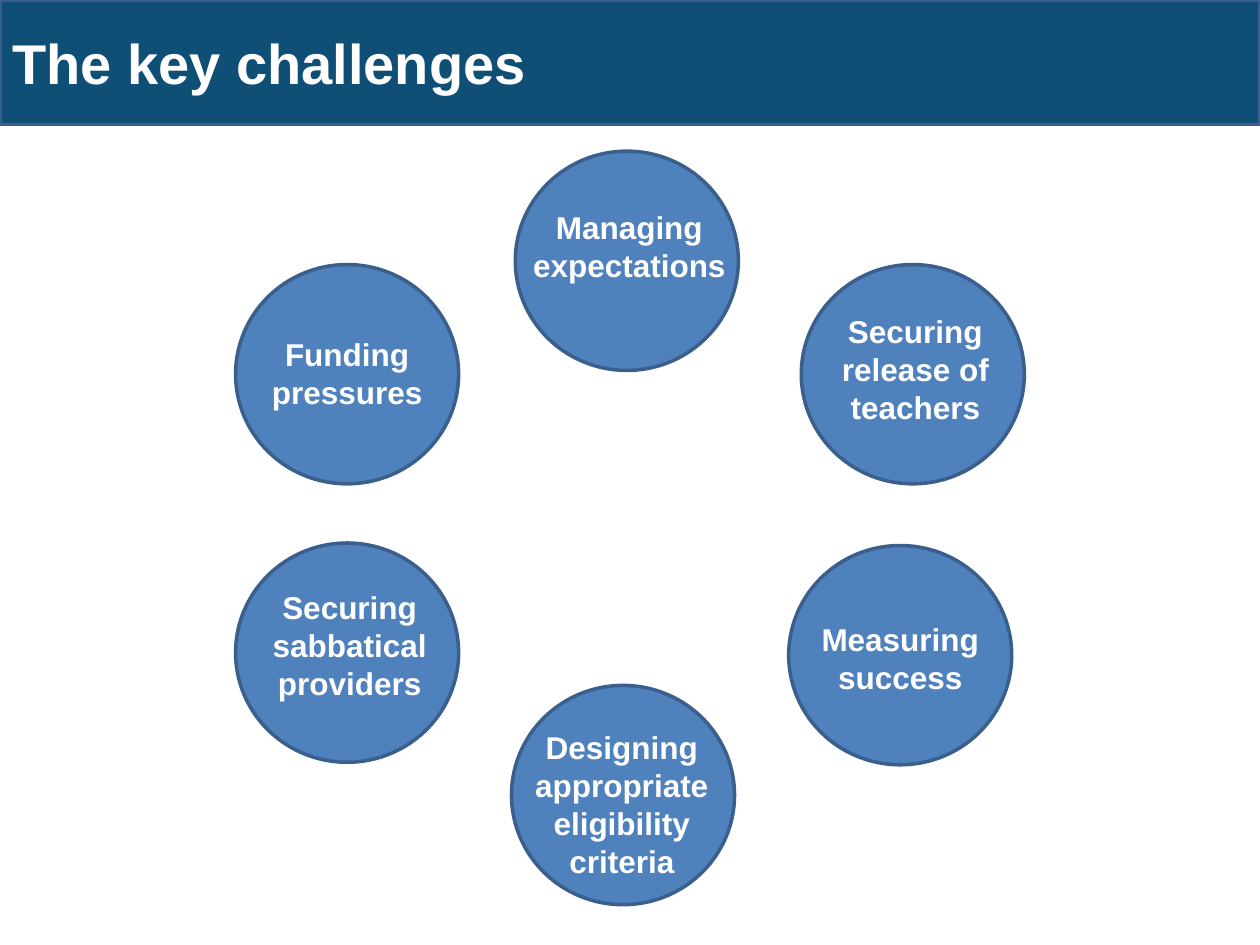
from pptx import Presentation
from pptx.dml.color import RGBColor
from pptx.enum.shapes import MSO_SHAPE
from pptx.enum.text import MSO_ANCHOR, MSO_AUTO_SIZE, PP_ALIGN
from pptx.util import Inches, Pt

NAVY = RGBColor(0x10, 0x4F, 0x75)
BLUE = RGBColor(0x4F, 0x81, 0xBD)
EDGE = RGBColor(0x3A, 0x5F, 0x8C)
WHITE = RGBColor(0xFF, 0xFF, 0xFF)

# Grid of 100 columns by 75 rows
WIDE, HIGH = Inches(10), Inches(7.5)
COL, ROW = WIDE / 100, HIGH / 75
DISC = (17.7, 17.4)
LABEL = 18.1

FONT = {"name": "Arial", "bold": True}
HEAD = {**FONT, "size": Pt(32)}
BODY = {**FONT, "size": Pt(18)}

# Disc column and row, label shift from the disc, label rows, wording
RING = [
    (40.9, 12, 0, 4, 10.1, "Managing expectations"),
    (62.6, 43.3, -0.2, 5.4, 10.1, "Measuring success"),
    (18.7, 21, -0.2, 5.1, 7.1, "Funding pressures"),
    (18.7, 43.1, 0, 3.1, 13.1, "Securing sabbatical providers"),
    (63.6, 21, 0, 3.3, 13.1, "Securing release of teachers"),
    (40.6, 54.4, -0.3, 2.9, 16.2, "Designing appropriate eligibility criteria"),
]


def place(col, row, cols, rows):
    """Turn grid units into slide lengths."""
    return [round(n) for n in (col * COL, row * ROW, cols * COL, rows * ROW)]


def draw(shapes, kind, box, fill):
    shape = shapes.add_shape(kind, *place(*box))
    shape.shadow.inherit = False
    shape.fill.solid()
    shape.fill.fore_color.rgb = fill
    shape.line.color.rgb = EDGE
    shape.line.width = Pt(2)
    return shape


def write(shape, text, style, align):
    shape.text_frame.word_wrap = True
    para = shape.text_frame.paragraphs[0]
    para.alignment = align
    run = para.add_run()
    run.text = text
    for key, value in style.items():
        setattr(run.font, key, value)
    run.font.color.rgb = WHITE


def banner(shapes, box, text):
    bar = draw(shapes, MSO_SHAPE.RECTANGLE, box, NAVY)
    bar.text_frame.vertical_anchor = MSO_ANCHOR.MIDDLE
    write(bar, text, HEAD, PP_ALIGN.LEFT)


def bubble(shapes, box, shift, rows, text):
    """Group a disc with the label that lies over it."""
    group = shapes.add_group_shape().shapes
    draw(group, MSO_SHAPE.OVAL, box, BLUE)
    col, row = box[0] + shift[0], box[1] + shift[1]
    label = group.add_textbox(*place(col, row, LABEL, rows))
    label.text_frame.auto_size = MSO_AUTO_SIZE.SHAPE_TO_FIT_TEXT
    write(label, text, BODY, PP_ALIGN.CENTER)


def main():
    deck = Presentation()
    deck.slide_width, deck.slide_height = WIDE, HIGH
    shapes = deck.slides.add_slide(deck.slide_layouts[6]).shapes

    # Title bar
    banner(shapes, (0, 0, 100, 9.9), "The key challenges")

    # Ring of challenges
    for col, row, right, down, rows, text in RING:
        bubble(shapes, (col, row, *DISC), (right, down), rows, text)

    deck.save("out.pptx")


if __name__ == "__main__":
    main()
